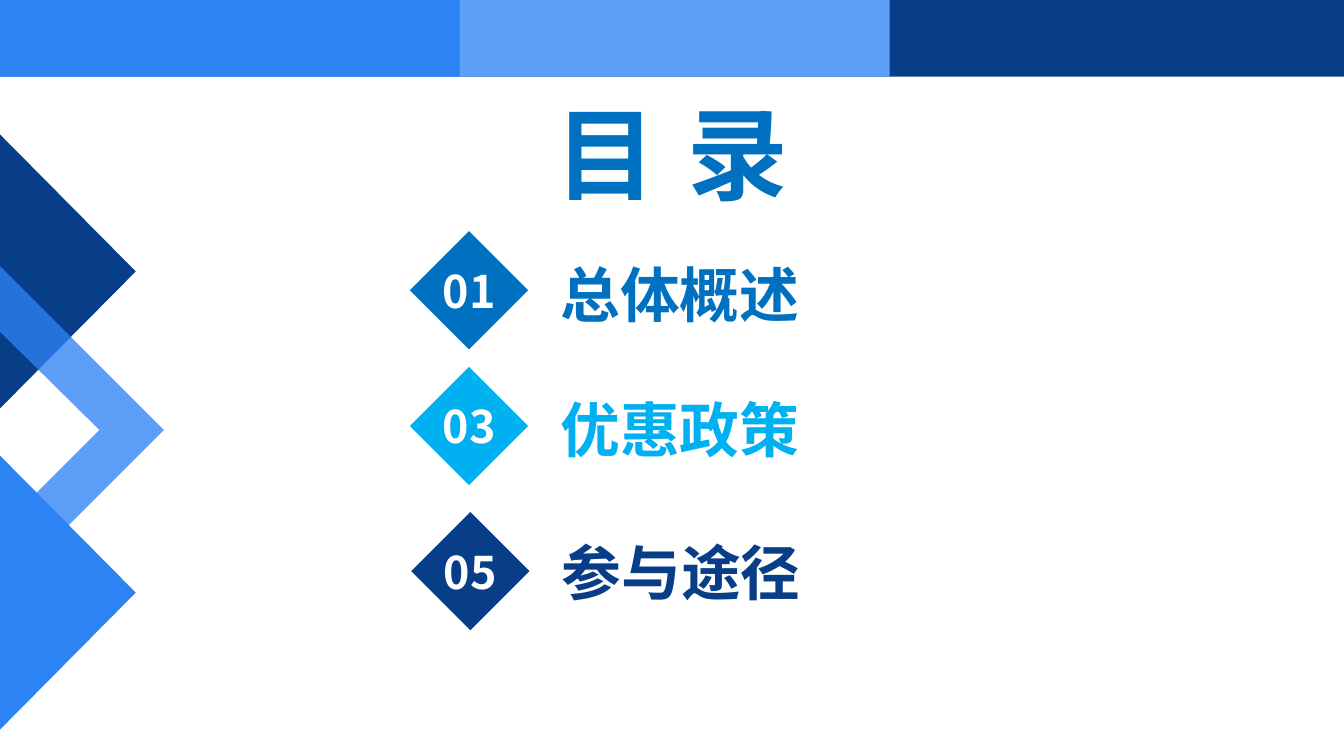
from lxml import etree
from pptx import Presentation
from pptx import util as u
from pptx.dml.color import RGBColor
from pptx.enum import shapes, text
from pptx.oxml import ns

PX = u.Inches(1) // 100  # one px is a hundredth of an inch
FONT = "Noto Sans CJK SC"

WHITE = RGBColor(0xFF, 0xFF, 0xFF)
BRIGHT = RGBColor(0x2D, 0x82, 0xF4)
LIGHT = RGBColor(0x5E, 0x9F, 0xF7)
NAVY = RGBColor(0x07, 0x3E, 0x87)
BLUE = RGBColor(0x00, 0x70, 0xC0)
CYAN = RGBColor(0x00, 0xB0, 0xF0)


def paint(shape, color, opacity=100):
    shape.shadow.inherit = False
    shape.line.fill.background()
    shape.fill.solid()
    shape.fill.fore_color.rgb = color
    if opacity < 100:
        color_node = shape.element.spPr.find(".//" + ns.qn("a:srgbClr"))
        etree.SubElement(color_node, ns.qn("a:alpha"), val=str(opacity * 1000))


def add_preset(page, kind, left, top, width, height, color):
    shape = page.shapes.add_shape(
        kind, left * PX, top * PX, width * PX, height * PX)
    paint(shape, color)
    return shape


def add_polygon(page, points, color, opacity=100):
    builder = page.shapes.build_freeform(*points[0], scale=PX)
    builder.add_line_segments(points[1:], close=True)
    paint(builder.convert_to_shape(), color, opacity)


def write(shape, words, size, color, align, spacing=0):
    para = shape.text_frame.paragraphs[0]
    para.text = words
    para.alignment = align
    font = para.font
    font.name = FONT
    font.size = u.Pt(size)
    font.bold = True
    font.color.rgb = color
    # East Asian typeface and letter spacing
    etree.SubElement(font._element, ns.qn("a:ea"), typeface=FONT)
    if spacing:
        font._element.set("spc", str(spacing))


def set_frame(shape, anchor, left_inset=0):
    frame = shape.text_frame
    frame.word_wrap = False
    frame.vertical_anchor = anchor
    frame.margin_left = left_inset * PX
    frame.margin_top = frame.margin_right = frame.margin_bottom = 0


def add_text(page, left, top, width, height):
    box = page.shapes.add_textbox(left * PX, top * PX, width * PX, height * PX)
    box.text_frame.word_wrap = True
    return box


def add_entry(page, number, title, color, left, top, width, height):
    diamond = add_preset(
        page, shapes.MSO_SHAPE.DIAMOND, left, top, 88, 88, color)
    set_frame(diamond, text.MSO_ANCHOR.MIDDLE)
    write(diamond, number, 24, WHITE, text.PP_ALIGN.CENTER)

    label = add_text(page, left + 70, top, width, height)
    set_frame(label, text.MSO_ANCHOR.BOTTOM, left_inset=42)
    write(label, title, 32, color, text.PP_ALIGN.LEFT)


def main():
    deck = Presentation()
    deck.slide_width = 1000 * PX
    deck.slide_height = deck.slide_width * 9 // 16
    page = deck.slides.add_slide(deck.slide_layouts[6])

    # Triangles and chevron on the left edge
    add_polygon(page, [(-6, 549), (-6, 333), (101, 441)], BRIGHT)
    add_polygon(page, [(101, 202), (-6, 310), (-6, 94)], NAVY)
    add_polygon(page, [(122, 320), (-6, 448), (-6, 400), (74, 320),
                       (-6, 241), (-6, 192)], BRIGHT, opacity=77)

    # Heading
    heading = add_text(page, 323, 63, 354, 110)
    write(heading, "目 录", 54, BLUE, text.PP_ALIGN.CENTER, spacing=220)

    # Contents entries
    for entry in (("03", "优惠政策", CYAN, 305, 273, 308, 73),
                  ("01", "总体概述", BLUE, 305, 172, 324, 73),
                  ("05", "参与途径", NAVY, 306, 381, 242, 71)):
        add_entry(page, *entry)

    # Top band: overlapping bars, widest at the back
    for width, color in ((1004, NAVY), (663, LIGHT), (343, BRIGHT)):
        add_preset(page, shapes.MSO_SHAPE.RECTANGLE, -1, -2, width, 59, color)

    deck.save("out.pptx")


if __name__ == "__main__":
    main()
